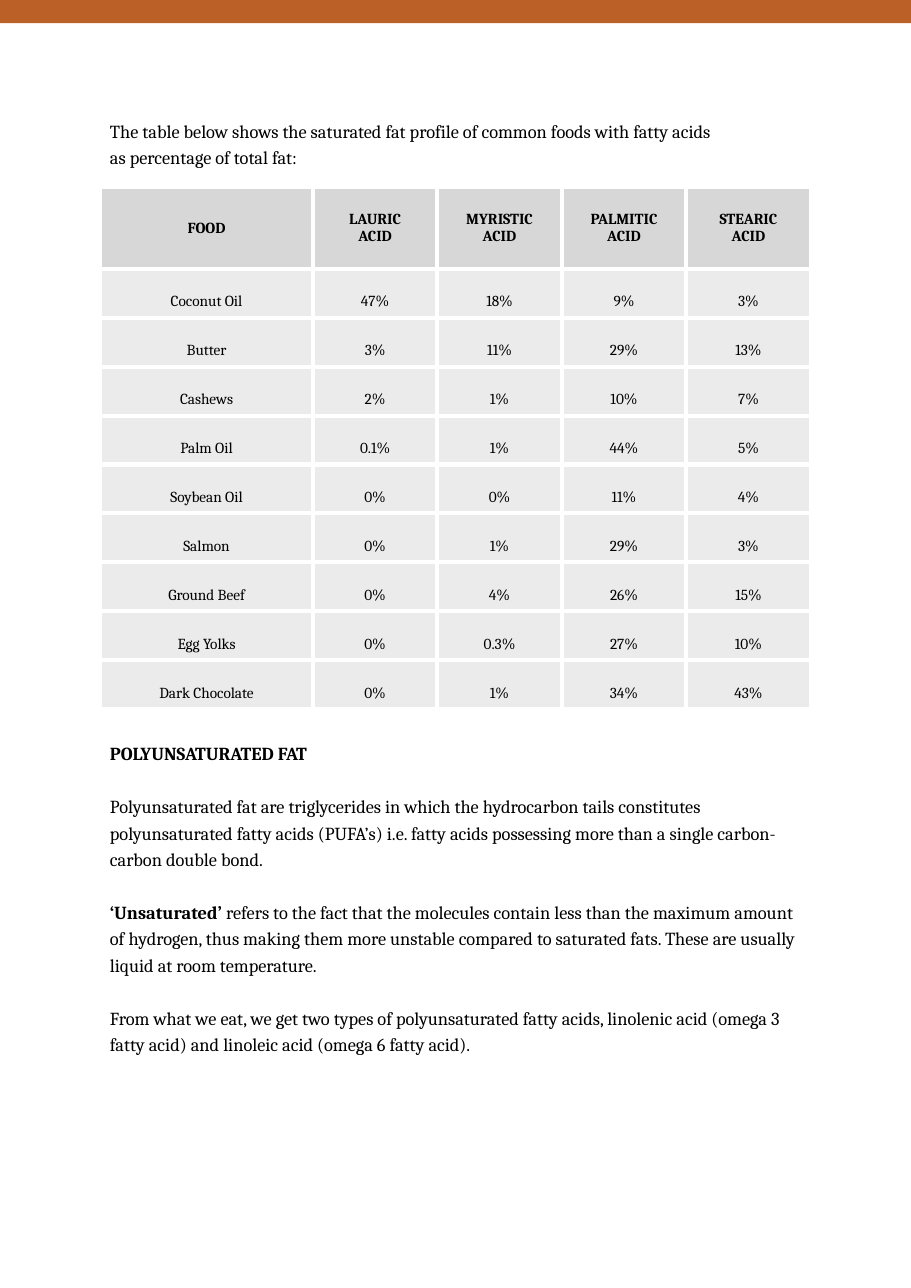
import pptx
import pptx.dml.color
import pptx.enum.shapes
import pptx.enum.text
import pptx.util
from lxml import etree
from pptx.oxml.ns import qn

RGB = pptx.dml.color.RGBColor
ORANGE = RGB(0xBB, 0x61, 0x28)
BLACK = RGB(0x00, 0x00, 0x00)
WHITE = RGB(0xFF, 0xFF, 0xFF)
HEADER_GREY = RGB(0xD7, 0xD7, 0xD7)
BODY_GREY = RGB(0xEB, 0xEB, 0xEB)

FONT = "Cambria"
PAGE_W, PAGE_H = 827, 1169
LEFT, WIDTH = 90, 646
PARAGRAPH_GAP = 17.3  # points, one text line

HEADERS = ["FOOD", "LAURIC\nACID", "MYRISTIC\nACID", "PALMITIC\nACID", "STEARIC\nACID"]
FOODS = [
    ["Coconut Oil", "47%", "18%", "9%", "3%"],
    ["Butter", "3%", "11%", "29%", "13%"],
    ["Cashews", "2%", "1%", "10%", "7%"],
    ["Palm Oil", "0.1%", "1%", "44%", "5%"],
    ["Soybean Oil", "0%", "0%", "11%", "4%"],
    ["Salmon", "0%", "1%", "29%", "3%"],
    ["Ground Beef", "0%", "4%", "26%", "15%"],
    ["Egg Yolks", "0%", "0.3%", "27%", "10%"],
    ["Dark Chocolate", "0%", "1%", "34%", "43%"],
]

# Each paragraph is a list of (text, bold) runs
INTRO = [
    [("The table below shows the saturated fat profile of common foods with "
      "fatty acids as percentage of total fat:", False)],
]
POLYUNSATURATED = [
    [("POLYUNSATURATED FAT", True)],
    [("Polyunsaturated fat are triglycerides in which the hydrocarbon tails "
      "constitutes polyunsaturated fatty acids (PUFA’s) i.e. fatty acids "
      "possessing more than a single carbon-carbon double bond.", False)],
    [("‘Unsaturated’ ", True),
     ("refers to the fact that the molecules contain less than the maximum "
      "amount of hydrogen, thus making them more unstable compared to "
      "saturated fats. These are usually liquid at room temperature.", False)],
    [("From what we eat, we get two types of polyunsaturated fatty acids, "
      "linolenic acid (omega 3 fatty acid) and linoleic acid (omega 6 fatty "
      "acid).", False)],
]


def px(n):
    """100 px to the inch."""
    return pptx.util.Emu(n * 9144)


def format_run(r, size, bold):
    r.font.name = FONT
    r.font.size = pptx.util.Pt(size)
    r.font.bold = bold
    r.font.color.rgb = BLACK


def add_top_band(slide, x, y, w, h):
    sp = slide.shapes.add_shape(
        pptx.enum.shapes.MSO_SHAPE.RECTANGLE, px(x), px(y), px(w), px(h))
    sp.shadow.inherit = False
    sp.fill.solid()
    sp.fill.fore_color.rgb = ORANGE
    sp.line.fill.background()


def add_prose(slide, x, y, w, h, paragraphs):
    tf = slide.shapes.add_textbox(px(x), px(y), px(w), px(h)).text_frame
    tf.word_wrap = True
    for i, runs in enumerate(paragraphs):
        p = tf.add_paragraph() if i else tf.paragraphs[0]
        p.line_spacing = 1.2
        if i:
            p.space_before = pptx.util.Pt(PARAGRAPH_GAP)
        for text, bold in runs:
            r = p.add_run()
            r.text = text
            format_run(r, 12, bold)


def set_borders(cell, color, width):
    tc_pr = cell._tc.get_or_add_tcPr()
    for side in ("a:lnL", "a:lnR", "a:lnT", "a:lnB"):
        ln = etree.SubElement(tc_pr, qn(side), w=str(pptx.util.Pt(width)))
        fill = etree.SubElement(ln, qn("a:solidFill"))
        etree.SubElement(fill, qn("a:srgbClr"), val=str(color))


def fill_cell(cell, text, header):
    set_borders(cell, WHITE, 3)
    cell.fill.solid()
    cell.fill.fore_color.rgb = HEADER_GREY if header else BODY_GREY
    if header:
        cell.vertical_anchor = pptx.enum.text.MSO_ANCHOR.MIDDLE
    cell.text_frame.text = text
    for p in cell.text_frame.paragraphs:
        p.alignment = pptx.enum.text.PP_ALIGN.CENTER
        if not header:
            p.line_spacing = 2.06
        for r in p.runs:
            format_run(r, 10, header)


def add_fat_table(slide, x, y, w, h):
    rows = [HEADERS] + FOODS
    food_w, header_h = 193, 74
    table = slide.shapes.add_table(
        len(rows), len(HEADERS), px(x), px(y), px(w), px(h)).table
    table.horz_banding = False
    for j, column in enumerate(table.columns):
        column.width = px((w - food_w) // (len(HEADERS) - 1) if j else food_w)
    for i, values in enumerate(rows):
        table.rows[i].height = px((h - header_h) // len(FOODS) if i else header_h)
        for j, text in enumerate(values):
            fill_cell(table.cell(i, j), text, header=i == 0)


def main():
    prs = pptx.Presentation()
    prs.slide_width, prs.slide_height = px(PAGE_W), px(PAGE_H)
    slide = prs.slides.add_slide(prs.slide_layouts[6])

    add_top_band(slide, 0, 0, PAGE_W, 21)
    add_prose(slide, LEFT, 100, 575, 59, INTRO)
    add_prose(slide, LEFT, 665, WIDTH, 299, POLYUNSATURATED)
    add_fat_table(slide, LEFT + 1, 170, WIDTH, 443)

    prs.save("out.pptx")


if __name__ == "__main__":
    main()
